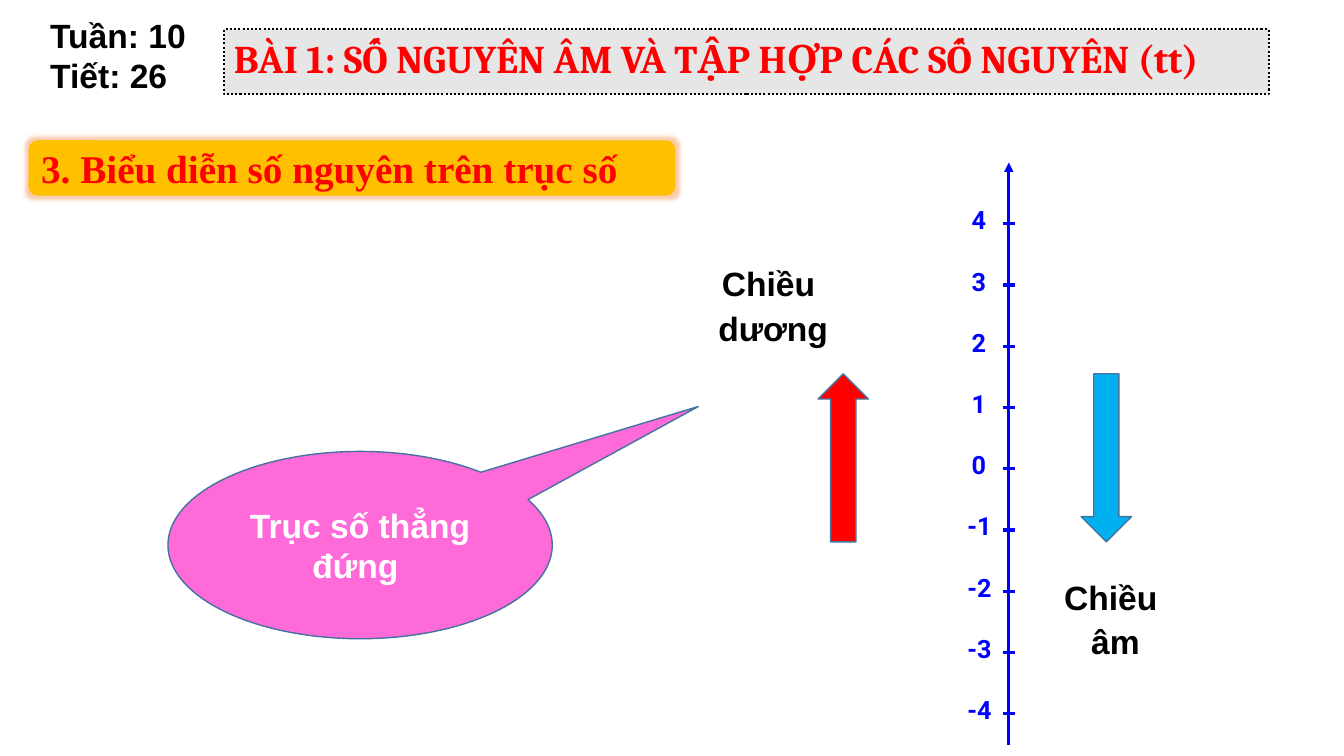
from dataclasses import dataclass
from lxml.etree import SubElement
from pptx import Presentation
from pptx.dml.color import RGBColor
from pptx.enum.dml import MSO_LINE
from pptx.enum.shapes import MSO_CONNECTOR, MSO_SHAPE
from pptx.enum.text import MSO_ANCHOR, MSO_AUTO_SIZE, PP_ALIGN
from pptx.oxml.ns import qn
from pptx.util import Emu, Pt

COLS, ROWS = 160, 90
WIDE, HIGH = 12192000, 6858000


@dataclass(frozen=True)
class Theme:
    red: str = "FF0000"
    blue: str = "0000FF"
    sky: str = "00B0F0"
    pink: str = "FF33CC"
    gold: str = "FFC000"
    glow: str = "ED7D31"
    gray: str = "E7E6E6"
    edge: str = "43739E"
    black: str = "000000"
    white: str = "FFFFFF"
    sans: str = "Arial"
    serif: str = "Times New Roman"
    title: str = "Cambria"
    digit: str = "Roboto"
    big: int = 28
    mid: int = 24
    small: int = 18


look = Theme()


def rgb(tone):
    return RGBColor.from_string(tone)


def col(n):
    return Emu(round(n * WIDE / COLS))


def row(n):
    return Emu(round(n * HIGH / ROWS))


def place(box):
    x, y, w, h = box
    return col(x), row(y), col(w), row(h)


def paint(shape, fill, edge=None, width=1):
    shape.fill.solid()
    shape.fill.fore_color.rgb = rgb(fill)
    if edge:
        shape.line.color.rgb = rgb(edge)
        shape.line.width = Pt(width)
    else:
        shape.line.fill.background()


def form(shapes, kind, box, fill, edge=None):
    shape = shapes.add_shape(kind, *place(box))
    shape.shadow.inherit = False
    paint(shape, fill, edge)
    return shape


def write(shape, lines, font, size, tone, align=PP_ALIGN.LEFT,
          anchor=MSO_ANCHOR.TOP, space=1.0):
    frame = shape.text_frame
    frame.word_wrap = True
    frame.auto_size = MSO_AUTO_SIZE.NONE
    frame.vertical_anchor = anchor
    for i, words in enumerate(lines):
        para = frame.add_paragraph() if i else frame.paragraphs[0]
        para.alignment = align
        para.line_spacing = space
        run = para.add_run()
        run.text = words
        run.font.name = font
        run.font.size = Pt(size)
        run.font.bold = True
        run.font.color.rgb = rgb(tone)


def stroke(shapes, x1, y1, x2, y2):
    line = shapes.add_connector(MSO_CONNECTOR.STRAIGHT,
                                col(x1), row(y1), col(x2), row(y2))
    line.line.color.rgb = rgb(look.blue)
    line.line.width = Pt(2.25)
    SubElement(line._element.spPr, qn("a:effectLst"))
    return line


def header(slide, box):
    x, y, w, h = box
    week = slide.shapes.add_textbox(*place((x, y, 19, h)))
    write(week, ["Tuần: 10", "Tiết: 26"], look.sans, look.mid, look.black)
    title = slide.shapes.title
    title.left, title.top, title.width, title.height = place(
        (x + 21.85, y + 2.3, w - 21.85, 7.7))
    SubElement(title._element.spPr, qn("a:prstGeom"), prst="roundRect")
    paint(title, look.gray, look.black, 1.5)
    title.line.dash_style = MSO_LINE.ROUND_DOT
    write(title, ["BÀI 1: SỐ NGUYÊN ÂM VÀ TẬP HỢP CÁC SỐ NGUYÊN (tt)"],
          look.title, look.big, look.red)


def heading(slide, box):
    bar = form(slide.shapes, MSO_SHAPE.ROUNDED_RECTANGLE, box, look.gold)
    halo = SubElement(bar._element.spPr.find(qn("a:effectLst")),
                      qn("a:glow"), rad="63500")
    tone = SubElement(halo, qn("a:srgbClr"), val=look.glow)
    SubElement(tone, qn("a:alpha"), val="40000")
    write(bar, ["3. Biểu diễn số nguyên trên trục số"], look.serif,
          look.big, look.red, anchor=MSO_ANCHOR.MIDDLE)


def axis(slide, box):
    x, y, w, h = box
    shapes = slide.shapes.add_group_shape().shapes
    mid = x + w
    marks = [(4 - i, y + 7.3 + 7.29 * i) for i in range(9)]
    for n, at in marks:
        left = x if n < 0 else x + 0.5
        label = shapes.add_textbox(*place((left, at - 2.88, 8.4, 5)))
        paint(label, look.white)
        write(label, [str(n)], look.digit, look.small, look.blue)
    line = stroke(shapes, mid, y + h, mid, y)
    SubElement(line.line._get_or_add_ln(), qn("a:tailEnd"), type="triangle")
    for n, at in marks:
        stroke(shapes, mid - 0.72, at, mid + 0.72, at)


def way(slide, box, lines, shift, turn, fill):
    x, y, w, h = box
    dx, dy = shift
    arrow = form(slide.shapes, MSO_SHAPE.RIGHT_ARROW,
                 (x + dx, y + dy, 20, 6), fill, look.edge)
    arrow.rotation = turn
    note = slide.shapes.add_textbox(*place(box))
    write(note, lines, look.sans, look.mid, look.black,
          PP_ALIGN.CENTER, space=1.1)


def bubble(slide, box):
    shape = form(slide.shapes, MSO_SHAPE.OVAL_CALLOUT, box,
                 look.pink, look.edge)
    shape.adjustments[0] = 0.88
    shape.adjustments[1] = -0.74
    tone = shape._element.spPr.find(qn("a:solidFill"))[0]
    SubElement(tone, qn("a:alpha"), val="73000")
    frame = shape.text_frame
    frame.margin_left = frame.margin_right = col(0.84)
    frame.margin_top = frame.margin_bottom = row(0.36)
    write(shape, ["Trục số thẳng đứng "], look.sans, look.mid, look.white,
          PP_ALIGN.CENTER, MSO_ANCHOR.MIDDLE)


def main():
    deck = Presentation()
    deck.slide_width, deck.slide_height = Emu(WIDE), Emu(HIGH)
    slide = deck.slides.add_slide(deck.slide_layouts[5])
    axis(slide, (114, 19.35, 6.1, 69.35))
    way(slide, (121.9, 67.6, 21.8, 11.9), ["Chiều ", "âm"],
        (-0.2, -16.1), 90, look.sky)
    bubble(slide, (20, 53.75, 45.75, 22.3))
    way(slide, (70.7, 30.25, 42.7, 11.9), ["Chiều ", "dương"],
        (19.7, 21.25), 270, look.red)
    header(slide, (4.8, 1.2, 146.25, 10.9))
    heading(slide, (3.4, 16.7, 77, 6.6))
    deck.save("out.pptx")


if __name__ == "__main__":
    main()
